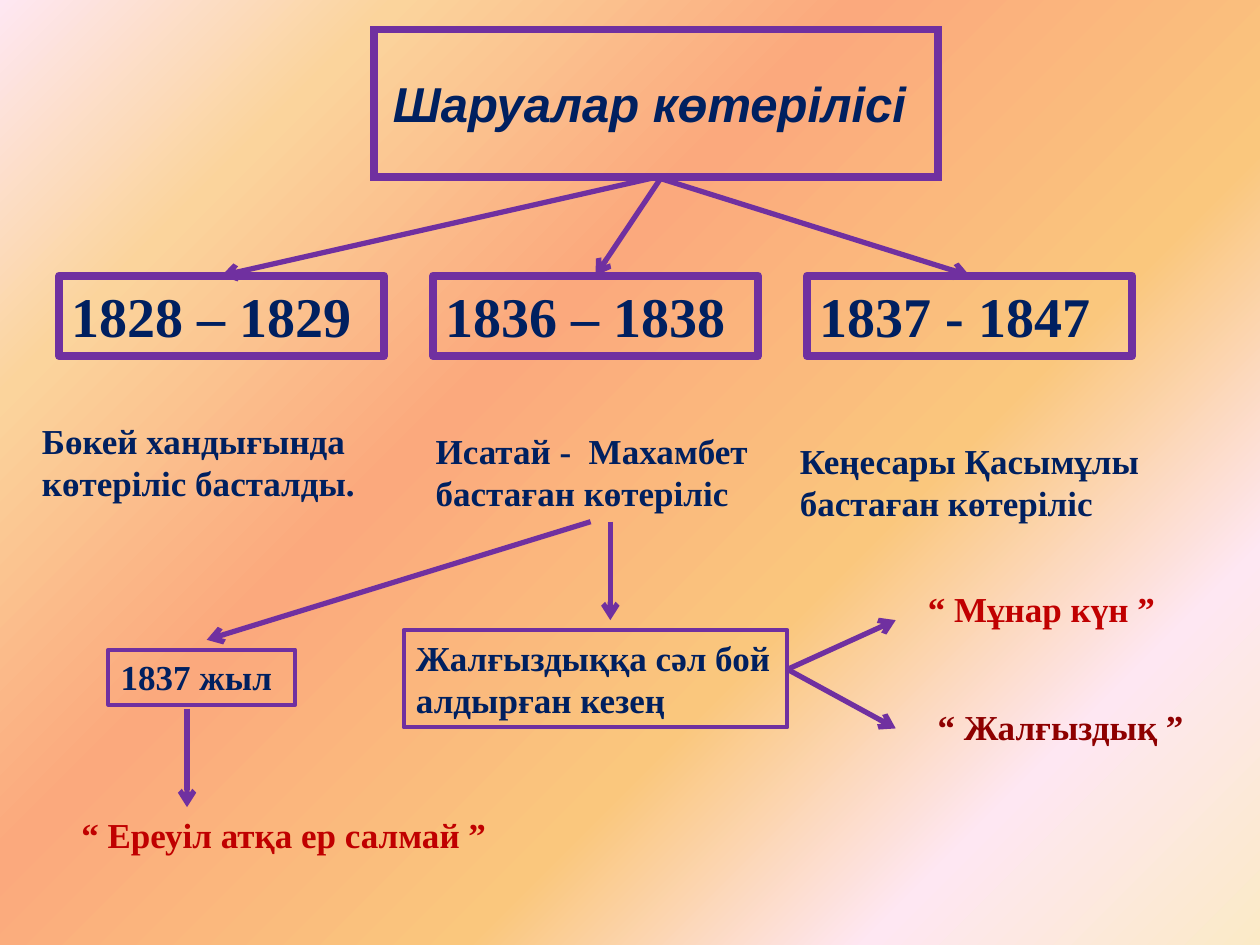
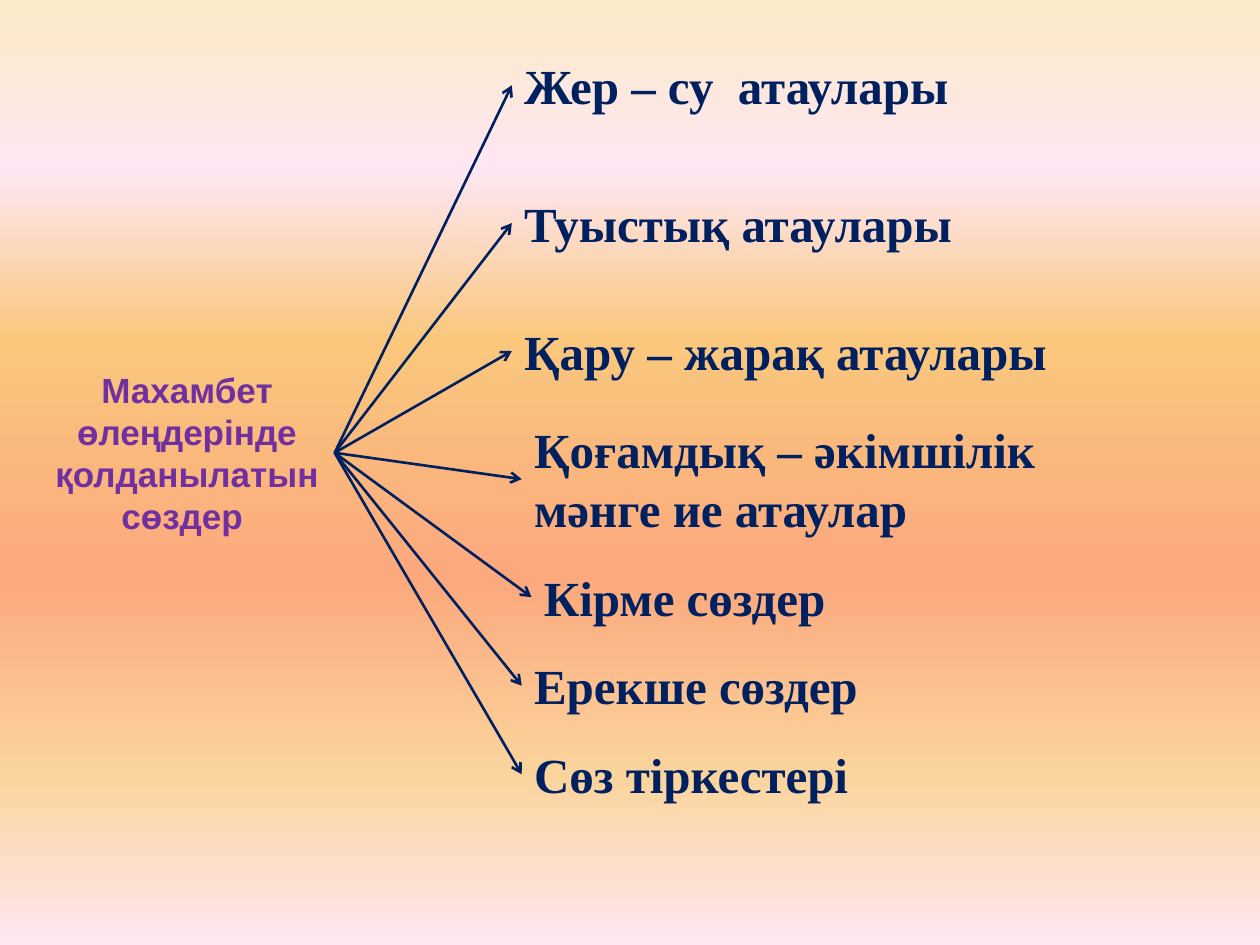
from dataclasses import dataclass

from lxml import etree
from pptx import Presentation
from pptx.dml.color import RGBColor
from pptx.enum.shapes import MSO_CONNECTOR, MSO_SHAPE
from pptx.enum.text import MSO_ANCHOR, MSO_AUTO_SIZE, PP_ALIGN
from pptx.oxml.ns import qn
from pptx.util import Pt

RECT = MSO_SHAPE.RECTANGLE
STRAIGHT = MSO_CONNECTOR.STRAIGHT
LEFT, CENTER = PP_ALIGN.LEFT, PP_ALIGN.CENTER
TOP, MIDDLE = MSO_ANCHOR.TOP, MSO_ANCHOR.MIDDLE
GROW, FIXED = MSO_AUTO_SIZE.SHAPE_TO_FIT_TEXT, MSO_AUTO_SIZE.NONE
SIDE_TOP, SIDE_LEFT, SIDE_BOTTOM, SIDE_RIGHT = range(4)


@dataclass(frozen=True)
class Theme:
    navy: str = "002060"
    purple: str = "7030A0"
    red: str = "C00000"
    dark_red: str = "8E0000"
    sans: str = "Arial"
    serif: str = "Times New Roman"
    small: int = 20
    large: int = 28
    year: int = 32
    thick: float = 4.5
    thin: float = 2.25
    backdrop: tuple = ((0, "FBEAC7"), (18, "FEE7F2"), (36, "FAC77D"),
                       (61, "FBA97D"), (82, "FBD49C"), (100, "FEE7F2"))


THEME = Theme()


@dataclass
class Box:
    text: str
    left: float
    top: float
    width: float
    height: float
    size: int = THEME.small
    color: str = THEME.navy
    border: float = 0
    title: bool = False
    italic: bool = False


@dataclass
class Arrow:
    start: tuple
    end: tuple
    color: str = THEME.purple
    width: float = 3


def new_slide(prs, angle: int):
    """Add a blank slide with the shared gradient, its angle clockwise."""
    slide = prs.slides.add_slide(prs.slide_layouts[6])
    fill = slide.background.fill
    fill.gradient()
    fill.gradient_angle = 360 - angle
    stops = slide.element.find(".//" + qn("a:gsLst"))
    for stop in list(stops):
        stops.remove(stop)
    for position, color in THEME.backdrop:
        stop = etree.SubElement(stops, qn("a:gs"), pos=str(position * 1000))
        etree.SubElement(stop, qn("a:srgbClr"), val=color)
    return slide


def add_box(slide, box: Box):
    """Draw a framed rectangle, or a plain text box when there is no border."""
    place = [Pt(v) for v in (box.left, box.top, box.width, box.height)]
    if box.border:
        sp = slide.shapes.add_shape(RECT, *place)
        sp.shadow.inherit = False
        sp.fill.background()
        sp.line.color.rgb = RGBColor.from_string(THEME.purple)
        sp.line.width = Pt(box.border)
        if box.title:
            ln = sp.element.spPr.find(qn("a:ln"))
            etree.SubElement(ln, qn("a:miter"), lim="800000")
    else:
        sp = slide.shapes.add_textbox(*place)
    tf = sp.text_frame
    tf.text = box.text
    tf.word_wrap = True
    tf.auto_size = FIXED if box.title else GROW
    tf.vertical_anchor = MIDDLE if box.title else TOP
    for p in tf.paragraphs:
        p.alignment = CENTER if box.title else LEFT
        for r in p.runs:
            r.font.name = THEME.sans if box.title else THEME.serif
            r.font.size = Pt(box.size)
            r.font.bold = True
            r.font.italic = box.italic
            r.font.color.rgb = RGBColor.from_string(box.color)
    return sp


def add_arrow(slide, arrow: Arrow):
    ends = [Pt(v) for v in (*arrow.start, *arrow.end)]
    line = slide.shapes.add_connector(STRAIGHT, *ends)
    line.line.color.rgb = RGBColor.from_string(arrow.color)
    line.line.width = Pt(arrow.width)
    sp_pr = line.element.spPr
    etree.SubElement(sp_pr.find(qn("a:ln")), qn("a:tailEnd"), type="arrow")
    etree.SubElement(sp_pr, qn("a:effectLst"))
    return line


def build_uprisings(prs) -> None:
    slide = new_slide(prs, 225)

    # Title
    title = add_box(slide, Box("Шаруалар көтерілісі ", 213.75, 16.88, 322.5, 84.38,
                               THEME.large, border=THEME.thick, title=True, italic=True))

    # Periods, each with an arrow from the title and a note below
    columns = (
        ("1828 – 1829", "Бөкей хандығында\nкөтеріліс басталды.", 16.88),
        ("1836 – 1838", "Исатай -  Махамбет бастаған көтеріліс", 241.88),
        ("1837 - 1847", "Кеңесары Қасымұлы бастаған көтеріліс", 450),
    )
    for i, (years, note, note_left) in enumerate(columns):
        period = add_box(slide, Box(years, 33.75 + 213.75 * i, 157.5, 185.63, 46,
                                    THEME.year, border=THEME.thick))
        add_box(slide, Box(note, note_left, 236.25 + 5.63 * i, 225, 55.7))
        arrow = add_arrow(slide, Arrow((378, 101.25), (378, 157.5)))
        if i != 1:
            arrow.begin_connect(title, SIDE_BOTTOM)
        arrow.end_connect(period, SIDE_TOP)

    # Poems and the times they belong to
    for box in (
        Box("1837 жыл", 61.88, 371.25, 106.88, 31.5, border=THEME.thin),
        Box("Жалғыздыққа сәл бой алдырған кезең", 230.63, 360, 219.38, 55.7,
            border=THEME.thin),
        Box("“ Ереуіл атқа ер салмай ”", 39.38, 461.25, 264.38, 31.5, color=THEME.red),
        Box("“ Мұнар күн ”", 523.13, 331.88, 157.5, 31.5, color=THEME.red),
        Box("“ Жалғыздық ”", 528.75, 399.38, 157.5, 31.5, color=THEME.dark_red),
    ):
        add_box(slide, box)
    for start, end in (
        ((337.5, 298.13), (118.13, 365.63)),
        ((348.75, 298.13), (348.75, 354.38)),
        ((106.88, 405), (106.88, 461.25)),
        ((450, 382.5), (511.88, 416.25)),
        ((450, 382.5), (511.88, 354.38)),
    ):
        add_arrow(slide, Arrow(start, end))


def build_word_groups(prs) -> None:
    slide = new_slide(prs, 90)

    # Title at the left
    title = add_box(slide, Box("Махамбет өлеңдерінде қолданылатын сөздер ",
                               22.5, 151.88, 168.75, 213.75,
                               color=THEME.purple, title=True))

    # Word groups, each joined to the title
    one_line, two_lines = 41.2, 75.1
    for text, left, top, width, height in (
        ("Жер – су  атаулары", 292.5, 28.13, 281.25, one_line),
        ("Туыстық атаулары", 292.5, 106.88, 281.25, one_line),
        ("Қару – жарақ атаулары", 292.5, 180, 354.38, one_line),
        ("Қоғамдық – әкімшілік мәнге ие атаулар", 298.13, 236.25, 365.63, two_lines),
        ("Кірме сөздер", 303.75, 320.63, 281.25, one_line),
        ("Ерекше сөздер", 298.13, 371.25, 281.25, one_line),
        ("Сөз тіркестері", 298.13, 421.88, 281.25, one_line),
    ):
        group = add_box(slide, Box(text, left, top, width, height, THEME.large))
        arrow = add_arrow(slide, Arrow((191.25, 258), (left, top), THEME.navy, 1.5))
        arrow.begin_connect(title, SIDE_RIGHT)
        arrow.end_connect(group, SIDE_LEFT)


def main() -> None:
    prs = Presentation()
    prs.slide_width, prs.slide_height = Pt(720), Pt(540)
    build_uprisings(prs)
    build_word_groups(prs)
    prs.save("out.pptx")


if __name__ == "__main__":
    main()
